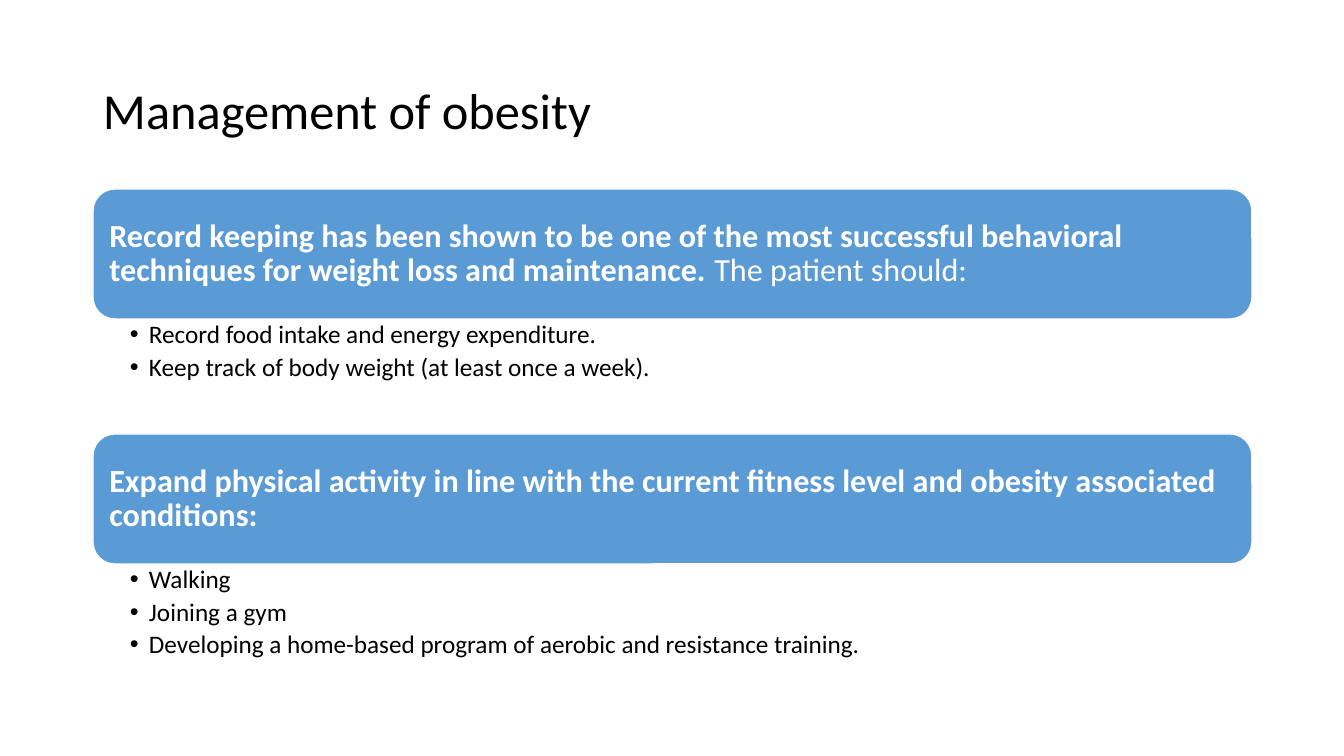
from lxml import etree
from pptx import Presentation, util as u
from pptx.dml.color import RGBColor
from pptx.enum import shapes, text
from pptx.oxml.ns import qn

BLUE = RGBColor(0x5B, 0x9B, 0xD5)
WHITE = RGBColor(255, 255, 255)
BLACK = RGBColor(0, 0, 0)
LEFT, WIDE = 93, 1159
TOP, STEP = 189, 245
HEAD, BODY = 130, 115


def px(n):
    return u.Emu(round(n * 914400 / 100.8))


def write(frame, lines, size, color, anchor, pads):
    frame.word_wrap = True
    frame.vertical_anchor = anchor
    (frame.margin_left, frame.margin_top,
     frame.margin_right, frame.margin_bottom) = [px(n) for n in pads]
    for i, line in enumerate(lines):
        para = frame.add_paragraph() if i else frame.paragraphs[0]
        para.alignment = text.PP_ALIGN.LEFT
        para.line_spacing = 0.9
        for words, bold in line:
            run = para.add_run()
            run.text = words
            run.font.name = "Calibri"
            run.font.size = u.Pt(size)
            run.font.bold = bold
            run.font.color.rgb = color


groups = [
    ([("Record keeping has been shown to be one of the most successful "
       "behavioral techniques for weight loss and maintenance. ", True),
      ("The patient should:", False)],
     ["Record food intake and energy expenditure.",
      "Keep track of body weight (at least once a week)."]),
    ([("Expand physical activity in line with the current fitness level "
       "and obesity associated conditions:", True)],
     ["Walking",
      "Joining a gym",
      "Developing a home-based program of aerobic and resistance training."]),
]

deck = Presentation()
deck.slide_width, deck.slide_height = px(1344), px(756)
slide = deck.slides.add_slide(deck.slide_layouts[6])

title = slide.shapes.add_textbox(px(LEFT), px(40), px(WIDE), px(146))
write(title.text_frame, [[("Management of obesity", False)]], 36, BLACK,
      text.MSO_ANCHOR.MIDDLE, (10, 5, 10, 5))

for i, (lead, items) in enumerate(groups):
    top = TOP + i * STEP
    bar = slide.shapes.add_shape(shapes.MSO_SHAPE.ROUNDED_RECTANGLE,
                                 px(LEFT), px(top), px(WIDE), px(HEAD))
    bar.shadow.inherit = False
    bar.fill.solid()
    bar.fill.fore_color.rgb = BLUE
    bar.line.color.rgb = WHITE
    bar.line.width = u.Pt(1)
    write(bar.text_frame, [lead], 23, WHITE,
          text.MSO_ANCHOR.MIDDLE, (10, 10, 10, 10))

    body = slide.shapes.add_textbox(px(LEFT), px(top + HEAD), px(WIDE), px(BODY))
    write(body.text_frame, [[(item, False)] for item in items], 18, BLACK,
          text.MSO_ANCHOR.TOP, (37, 3, 14, 3))
    for para in body.text_frame.paragraphs:
        para.level = 1
        para.space_after = u.Pt(3.6)
        props = para._p.get_or_add_pPr()
        props.set("marL", str(px(19)))
        props.set("indent", str(-px(19)))
        etree.SubElement(props, qn("a:buFont")).set("typeface", "Arial")
        etree.SubElement(props, qn("a:buChar")).set("char", "•")

deck.save("out.pptx")
